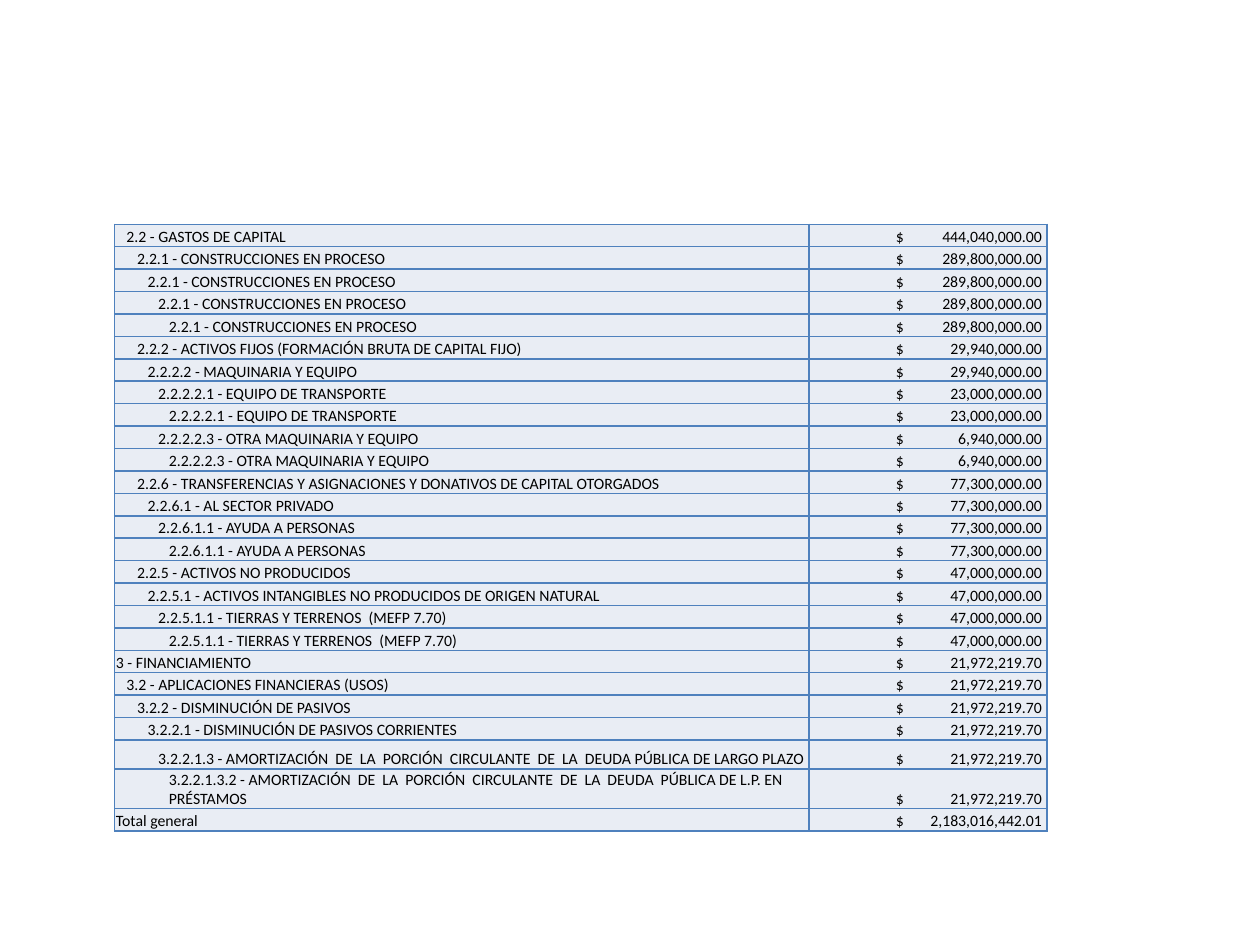
from lxml import etree
from pptx import Presentation
from pptx.dml.color import RGBColor
from pptx.enum.text import MSO_ANCHOR
from pptx.oxml.ns import qn
from pptx.util import Inches, Pt

BOTTOM = MSO_ANCHOR.BOTTOM
THEME = {"font": "Calibri", "size": 9, "text": "000000", "fill": "E9EDF4",
         "border": "4F81BD", "border_pt": 1}

# Budget lines: outline level, concept, amount
LINES = [
    (1, "2.2 - GASTOS DE CAPITAL", 444040000),
    (2, "2.2.1 - CONSTRUCCIONES EN PROCESO", 289800000),
    (3, "2.2.1 - CONSTRUCCIONES EN PROCESO", 289800000),
    (4, "2.2.1 - CONSTRUCCIONES EN PROCESO", 289800000),
    (5, "2.2.1 - CONSTRUCCIONES EN PROCESO", 289800000),
    (2, "2.2.2 - ACTIVOS FIJOS (FORMACIÓN BRUTA DE CAPITAL FIJO)", 29940000),
    (3, "2.2.2.2 - MAQUINARIA Y EQUIPO", 29940000),
    (4, "2.2.2.2.1 - EQUIPO DE TRANSPORTE", 23000000),
    (5, "2.2.2.2.1 - EQUIPO DE TRANSPORTE", 23000000),
    (4, "2.2.2.2.3 - OTRA MAQUINARIA Y EQUIPO", 6940000),
    (5, "2.2.2.2.3 - OTRA MAQUINARIA Y EQUIPO", 6940000),
    (2, "2.2.6 - TRANSFERENCIAS Y ASIGNACIONES Y DONATIVOS DE CAPITAL OTORGADOS", 77300000),
    (3, "2.2.6.1 - AL SECTOR PRIVADO", 77300000),
    (4, "2.2.6.1.1 - AYUDA A PERSONAS", 77300000),
    (5, "2.2.6.1.1 - AYUDA A PERSONAS", 77300000),
    (2, "2.2.5 - ACTIVOS NO PRODUCIDOS", 47000000),
    (3, "2.2.5.1 - ACTIVOS INTANGIBLES NO PRODUCIDOS DE ORIGEN NATURAL", 47000000),
    (4, "2.2.5.1.1 - TIERRAS Y TERRENOS  (MEFP 7.70)", 47000000),
    (5, "2.2.5.1.1 - TIERRAS Y TERRENOS  (MEFP 7.70)", 47000000),
    (0, "3 - FINANCIAMIENTO", 21972219.70),
    (1, "3.2 - APLICACIONES FINANCIERAS (USOS)", 21972219.70),
    (2, "3.2.2 - DISMINUCIÓN DE PASIVOS", 21972219.70),
    (3, "3.2.2.1 - DISMINUCIÓN DE PASIVOS CORRIENTES", 21972219.70),
    (4, "3.2.2.1.3 - AMORTIZACIÓN  DE  LA  PORCIÓN  CIRCULANTE  DE  LA  DEUDA "
        "PÚBLICA DE LARGO PLAZO", 21972219.70),
    (5, "3.2.2.1.3.2 - AMORTIZACIÓN  DE  LA  PORCIÓN  CIRCULANTE  DE  LA  DEUDA  "
        "PÚBLICA DE L.P. EN PRÉSTAMOS", 21972219.70),
    (0, "Total general", 2183016442.01),
]

# Layout in inches
LEFT, TOP, HEIGHT = 0.91, 1.78, 4.82
COLUMNS = (5.51, 1.89)
TALL_ROWS = {23: 0.23, 24: 0.31}
ROW = (HEIGHT - sum(TALL_ROWS.values())) / (len(LINES) - len(TALL_ROWS))
MARGIN, MAX_INDENT, MAX_LEVEL = 0.01, 0.43, 5
INDENT_STEP = (MAX_INDENT - MARGIN) / MAX_LEVEL
CURRENCY_X, AMOUNT_RIGHT = 0.69, 1.85


def add_borders(cell):
    tc_pr = cell._tc.get_or_add_tcPr()
    for i, side in enumerate(("a:lnL", "a:lnR", "a:lnT", "a:lnB")):
        ln = etree.Element(qn(side), w=str(Pt(THEME["border_pt"])))
        fill = etree.SubElement(ln, qn("a:solidFill"))
        etree.SubElement(fill, qn("a:srgbClr"), val=THEME["border"])
        tc_pr.insert(i, ln)


def fill_cell(cell, text, left):
    cell.margin_left = Inches(left)
    cell.margin_right = cell.margin_top = Inches(MARGIN)
    cell.margin_bottom = 0
    cell.vertical_anchor = BOTTOM
    cell.fill.solid()
    cell.fill.fore_color.rgb = RGBColor.from_string(THEME["fill"])
    add_borders(cell)
    p = cell.text_frame.paragraphs[0]
    r = p.add_run()
    r.text = text
    r.font.name = THEME["font"]
    r.font.size = Pt(THEME["size"])
    r.font.color.rgb = RGBColor.from_string(THEME["text"])
    return p


def add_right_tab(p, position):
    tabs = etree.SubElement(p._p.get_or_add_pPr(), qn("a:tabLst"))
    etree.SubElement(tabs, qn("a:tab"), pos=str(Inches(position)), algn="r")


prs = Presentation()
prs.slide_width, prs.slide_height = Inches(10), Inches(7.5)
s = prs.slides.add_slide(prs.slide_layouts[6])

# Budget table
table = s.shapes.add_table(len(LINES), len(COLUMNS), Inches(LEFT), Inches(TOP),
                           Inches(sum(COLUMNS)), Inches(HEIGHT)).table
table.first_row = table.horz_banding = False
for column, width in zip(table.columns, COLUMNS):
    column.width = Inches(width)

# Indented concepts; currency sign left, amount on a right tab
for i, (level, concept, amount) in enumerate(LINES):
    table.rows[i].height = Inches(TALL_ROWS.get(i, ROW))
    fill_cell(table.cell(i, 0), concept, MARGIN + level * INDENT_STEP)
    p = fill_cell(table.cell(i, 1), f"$\t{amount:,.2f}", CURRENCY_X)
    add_right_tab(p, AMOUNT_RIGHT - CURRENCY_X)

prs.save("out.pptx")
